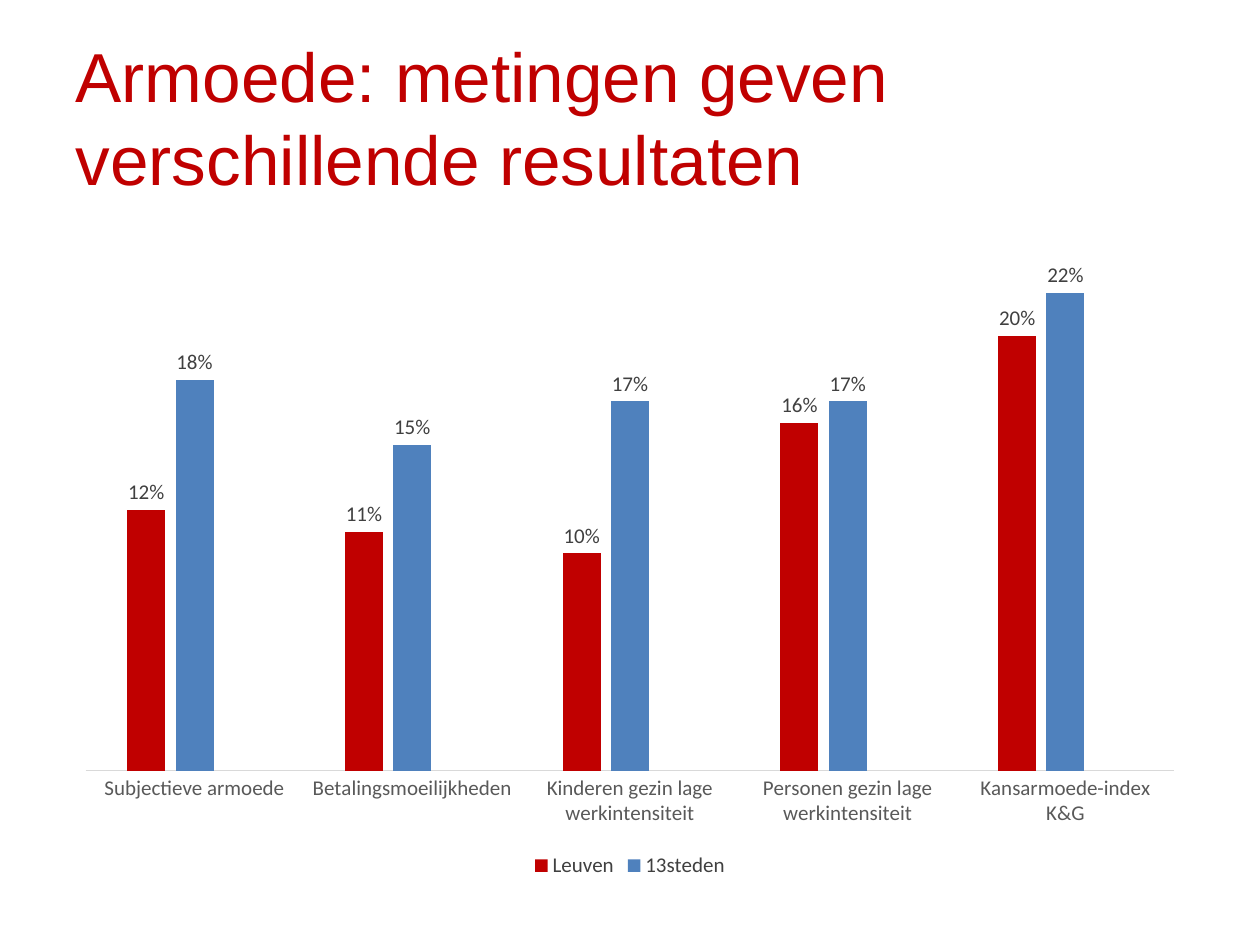
from pptx import Presentation
from pptx.chart.data import CategoryChartData
from pptx.dml.color import RGBColor
from pptx.enum.chart import XL_CHART_TYPE as ChartType, XL_LABEL_POSITION as LabelPosition
from pptx.enum.chart import XL_LEGEND_POSITION as LegendPosition, XL_TICK_MARK as TickMark
from pptx.enum.text import MSO_ANCHOR, MSO_AUTO_SIZE, PP_ALIGN
from pptx.oxml import parse_xml
from pptx.oxml.ns import nsdecls
from pptx.util import Pt

COLORS = {"red": "C00000", "blue": "4F81BD", "green": "9BBB59", "black": "000000",
          "label": "404040", "axis": "595959", "line": "D9D9D9"}


def style_font(font, name, size, color):
    font.name = name
    font.size = Pt(size)
    font.bold = False
    font.color.rgb = RGBColor.from_string(COLORS[color])


deck = Presentation()
deck.slide_width, deck.slide_height = Pt(720), Pt(540)
page = deck.slides.add_slide(deck.slide_layouts[5])

title = page.shapes.title
title.left, title.top, title.width, title.height = Pt(36), Pt(21.6), Pt(648), Pt(90)
frame = title.text_frame
frame.text = "Armoede: metingen geven verschillende resultaten"
frame.word_wrap = True
frame.auto_size = MSO_AUTO_SIZE.NONE
frame.vertical_anchor = MSO_ANCHOR.MIDDLE
para = frame.paragraphs[0]
para.alignment = PP_ALIGN.LEFT
style_font(para.font, "Arial", 39.6, "red")

data = CategoryChartData(number_format="0%")
data.categories = ["Subjectieve armoede", "Betalingsmoeilijkheden",
                   "Kinderen gezin lage werkintensiteit",
                   "Personen gezin lage werkintensiteit", "Kansarmoede-index K&G"]
data.add_series("Leuven", [0.12, 0.11, 0.10, 0.16, 0.20])
data.add_series("13steden", [0.18, 0.15, 0.17, 0.17, 0.22])
data.add_series("Series 3", [None] * 5)
chart = page.shapes.add_chart(ChartType.COLUMN_CLUSTERED, Pt(36), Pt(122.4),
                              Pt(648), Pt(382.3), data).chart
chart.has_title = False
style_font(chart.font, "Calibri", 10, "black")

plot = chart.plots[0]
plot.gap_width, plot.overlap = 219, -27
plot.vary_by_categories = False
for series, color in zip(plot.series, ["red", "blue", "green"]):
    series.format.fill.solid()
    series.format.fill.fore_color.rgb = RGBColor.from_string(COLORS[color])
    series.invert_if_negative = False
for series in list(plot.series)[:2]:
    labels = series.data_labels
    labels.show_value = True
    labels.number_format, labels.number_format_is_linked = "0%", False
    labels.position = LabelPosition.OUTSIDE_END
    style_font(labels.font, "Calibri", 12, "label")

categories = chart.category_axis
categories.major_tick_mark = categories.minor_tick_mark = TickMark.NONE
categories.format.line.width = Pt(0.75)
categories.format.line.color.rgb = RGBColor.from_string(COLORS["line"])
style_font(categories.tick_labels.font, "Calibri", 12, "axis")

values = chart.value_axis
values.visible = False
values.has_major_gridlines = False
values.minimum_scale, values.maximum_scale = 0, 0.25
values.tick_labels.number_format = "0%"
values.tick_labels.number_format_is_linked = False

chart.has_legend = True
legend = chart.legend
legend.position = LegendPosition.BOTTOM
legend.include_in_layout = False
style_font(legend.font, "Calibri", 12, "label")
hidden_entry = parse_xml(f'<c:legendEntry {nsdecls("c")}><c:idx val="2"/>'
                         '<c:delete val="1"/></c:legendEntry>')
legend._element.find("{*}legendPos").addnext(hidden_entry)

deck.save("out.pptx")
